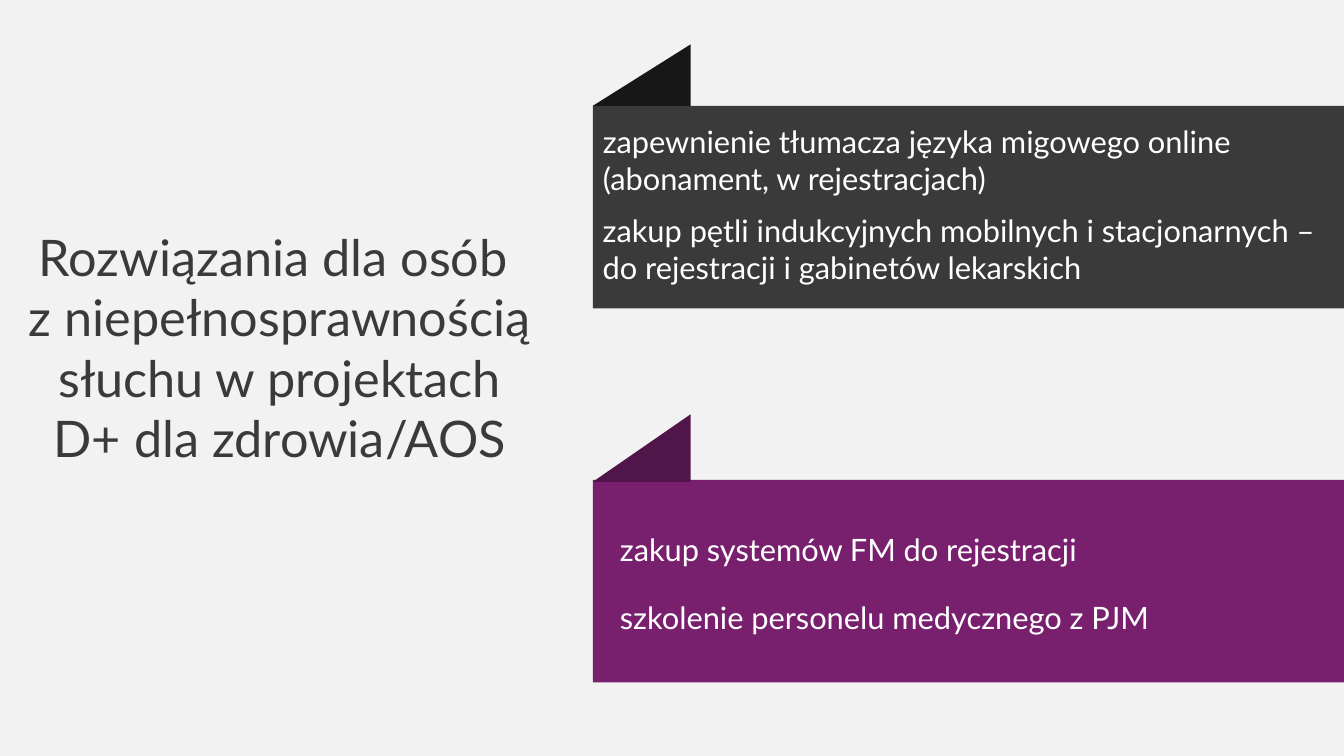
from dataclasses import dataclass

from pptx import Presentation
from pptx.dml.color import RGBColor
from pptx.enum import shapes, text
from pptx.util import Inches, Pt


@dataclass(frozen=True)
class Theme:
    font: str = "Lato"
    title_size: int = 36
    body_size: int = 22
    background: str = "F2F2F2"
    dark: str = "3A3A3A"
    dark_fold: str = "171717"
    purple: str = "78206E"
    purple_fold: str = "501649"
    light: str = "FFFFFF"


THEME = Theme()
BANNER_LEFT, BANNER_WIDTH, BANNER_HEIGHT = 5.88, 7.46, 2.01
FOLD_WIDTH = 0.97


def format_text(tf, size, color, align):
    tf.word_wrap = True
    for p in tf.paragraphs:
        p.alignment = align
        for r in p.runs:
            r.font.name = THEME.font
            r.font.size = Pt(size)
            r.font.color.rgb = RGBColor.from_string(color)


def add_title(s, words, left, top, width, height):
    sp = s.shapes.title
    sp.left, sp.top = Inches(left), Inches(top)
    sp.width, sp.height = Inches(width), Inches(height)
    tf = sp.text_frame
    tf.text = words
    tf.auto_size = text.MSO_AUTO_SIZE.NONE
    tf.vertical_anchor = text.MSO_ANCHOR.TOP
    format_text(tf, THEME.title_size, THEME.dark, text.PP_ALIGN.CENTER)


def add_filled(s, kind, color, left, top, width, height):
    sp = s.shapes.add_shape(kind, Inches(left), Inches(top), Inches(width), Inches(height))
    sp.shadow.inherit = False
    sp.fill.solid()
    sp.fill.fore_color.rgb = RGBColor.from_string(color)
    sp.line.fill.background()
    return sp


def add_banner(s, top, color, fold_color, fold_height, fold_bottom):
    add_filled(s, shapes.MSO_SHAPE.RECTANGLE, color,
               BANNER_LEFT, top, BANNER_WIDTH, BANNER_HEIGHT)
    # The fold turns about its centre, so its sides swap
    fold = add_filled(s, shapes.MSO_SHAPE.RIGHT_TRIANGLE, fold_color,
                      BANNER_LEFT + (FOLD_WIDTH - fold_height) / 2,
                      fold_bottom - (fold_height + FOLD_WIDTH) / 2,
                      fold_height, FOLD_WIDTH)
    fold.rotation = 270


def add_label(s, words, left, top, width, height):
    sp = s.shapes.add_textbox(Inches(left), Inches(top), Inches(width), Inches(height))
    tf = sp.text_frame
    tf.text = words
    format_text(tf, THEME.body_size, THEME.light, text.PP_ALIGN.LEFT)


def main():
    prs = Presentation()
    prs.slide_width, prs.slide_height = Inches(13.33), Inches(7.5)
    s = prs.slides.add_slide(prs.slide_layouts[5])
    s.background.fill.solid()
    s.background.fill.fore_color.rgb = RGBColor.from_string(THEME.background)

    # Title on the left
    add_title(s, "Rozwiązania dla osób \vz niepełnosprawnością słuchu w projektach "
                 "D+ dla zdrowia/AOS", 0.16, 2.19, 5.23, 2.52)

    # Folded banners on the right
    add_banner(s, 1.05, THEME.dark, THEME.dark_fold, 0.61, 1.05)
    add_banner(s, 4.76, THEME.purple, THEME.purple_fold, 0.67, 4.78)

    # Banner texts
    add_label(s, "zapewnienie tłumacza języka migowego online \v(abonament, w rejestracjach)",
              BANNER_LEFT, 1.17, 7.08, 0.84)
    add_label(s, "zakup pętli indukcyjnych mobilnych i stacjonarnych – "
                 "do rejestracji i gabinetów lekarskich",
              BANNER_LEFT, 2.05, BANNER_WIDTH, 0.84)
    add_label(s, "zakup systemów FM do rejestracji", 6.05, 5.22, 6.74, 0.47)
    add_label(s, "szkolenie personelu medycznego z PJM", 6.05, 5.89, 6.74, 0.47)

    prs.save("out.pptx")


if __name__ == "__main__":
    main()
